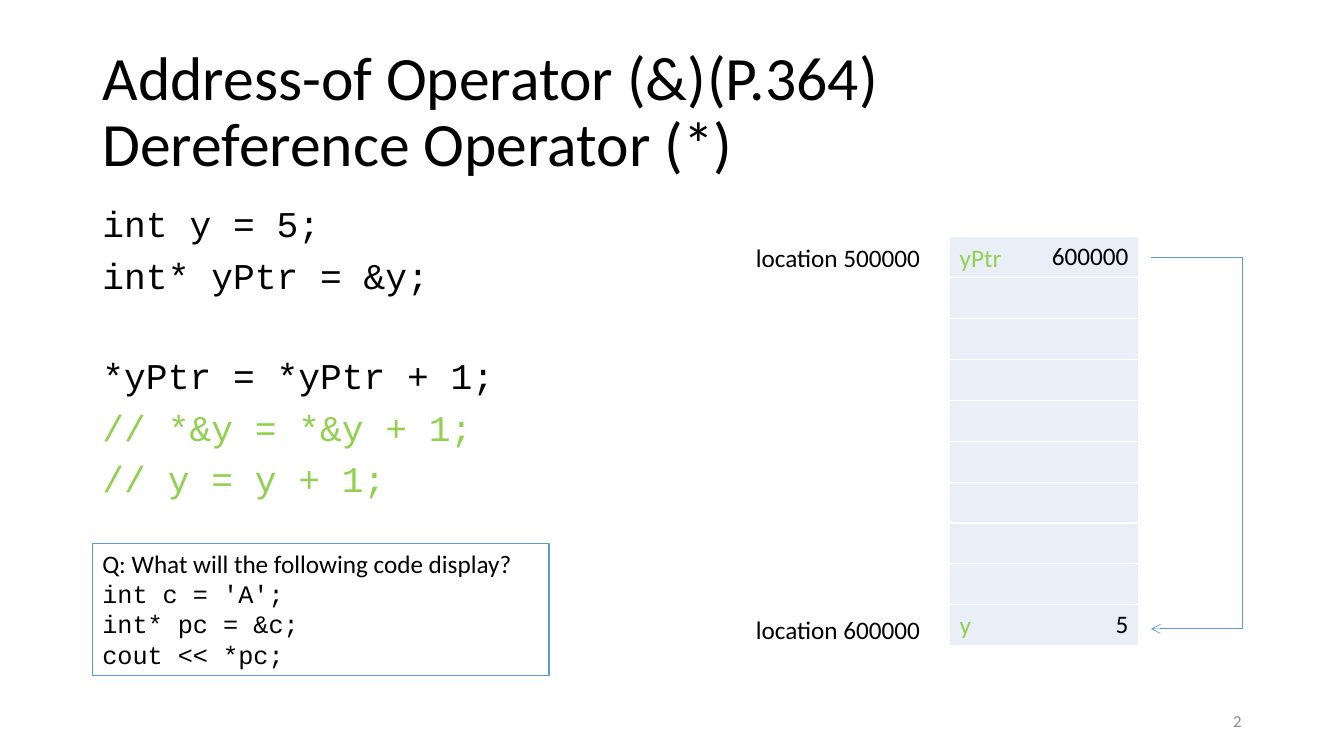
from lxml.etree import SubElement
from pptx import Presentation
from pptx.dml.color import RGBColor
from pptx.enum.shapes import MSO_CONNECTOR, MSO_SHAPE
from pptx.enum.text import MSO_ANCHOR, MSO_AUTO_SIZE, PP_ALIGN
from pptx.oxml.ns import qn
from pptx.util import Pt

BLACK = RGBColor(0x00, 0x00, 0x00)
GREEN = RGBColor(0x92, 0xD0, 0x50)
BLUE = RGBColor(0x5B, 0x9B, 0xD5)
PALE_BLUE = RGBColor(0xEA, 0xEF, 0xF7)
GRAY = RGBColor(0x8C, 0x8C, 0x8C)
TEXT_FONT = "Calibri"
CODE_FONT = "Courier New"

LEFT = 66
MEMORY_LEFT, MEMORY_TOP, MEMORY_WIDTH = 678.4, 169.2, 134.8
ROW_HEIGHT, ROW_COUNT = 29.2, 10
LAST_ROW_TOP = MEMORY_TOP + ROW_HEIGHT * (ROW_COUNT - 1)
ARROW_LEFT, ARROW_RIGHT = 822.2, 887.6


def write(paragraph, text, font=TEXT_FONT, size=18, color=BLACK,
          align=PP_ALIGN.LEFT, line_spacing=None, space_before=0):
    paragraph.text = text
    paragraph.alignment = align
    paragraph.line_spacing = line_spacing
    paragraph.space_before = Pt(space_before)
    for run in paragraph.runs:
        run.font.name = font
        run.font.size = Pt(size)
        run.font.color.rgb = color


def write_lines(text_frame, lines):
    """Fill a frame from (text, format) pairs, one paragraph each."""
    text_frame.word_wrap = True
    text_frame.auto_size = MSO_AUTO_SIZE.NONE
    for index, (text, style) in enumerate(lines):
        paragraph = text_frame.add_paragraph() if index else text_frame.paragraphs[0]
        write(paragraph, text, **style)


class SlideBuilder:
    def __init__(self, slide):
        self.slide = slide
        self.line_color = BLUE

    def placeholder(self, index, left, top, width, height, lines, anchor):
        shape = self.slide.placeholders[index]
        shape.left, shape.top = Pt(left), Pt(top)
        shape.width, shape.height = Pt(width), Pt(height)
        shape.text_frame.vertical_anchor = anchor
        write_lines(shape.text_frame, lines)
        for paragraph in shape.text_frame.paragraphs:
            properties = paragraph._p.get_or_add_pPr()
            properties.set("marL", "0")
            properties.set("indent", "0")
            SubElement(properties, qn("a:buNone"))
        return shape

    def text(self, left, top, width, height, text, **style):
        shape = self.slide.shapes.add_textbox(Pt(left), Pt(top), Pt(width), Pt(height))
        write_lines(shape.text_frame, [(text, style)])
        return shape

    def box(self, left, top, width, height, lines):
        shape = self.slide.shapes.add_shape(
            MSO_SHAPE.RECTANGLE, Pt(left), Pt(top), Pt(width), Pt(height))
        shape.shadow.inherit = False
        shape.fill.background()
        shape.line.color.rgb = self.line_color
        shape.line.width = Pt(0.75)
        shape.text_frame.vertical_anchor = MSO_ANCHOR.TOP
        write_lines(shape.text_frame, lines)

    def memory(self, left, top, width, row_height, values):
        """Draw a one-column table with a cell for each memory location."""
        table = self.slide.shapes.add_table(
            len(values), 1, Pt(left), Pt(top), Pt(width),
            Pt(row_height * len(values))).table
        table.first_row = False
        table.horz_banding = False
        for row, value in zip(table.rows, values):
            row.height = Pt(row_height)
            cell = row.cells[0]
            cell.fill.solid()
            cell.fill.fore_color.rgb = PALE_BLUE
            write(cell.text_frame.paragraphs[0], value, align=PP_ALIGN.RIGHT)

    def line(self, start, end, arrow=False):
        connector = self.slide.shapes.add_connector(
            MSO_CONNECTOR.STRAIGHT, *map(Pt, start), *map(Pt, end))
        connector.line.color.rgb = self.line_color
        connector.line.width = Pt(0.5)
        if arrow:
            SubElement(connector.line._get_or_add_ln(), qn("a:tailEnd"), type="arrow")
        SubElement(connector._element.spPr, qn("a:effectLst"))


def add_tab_stop(paragraph, position):
    tabs = SubElement(paragraph._p.get_or_add_pPr(), qn("a:tabLst"))
    SubElement(tabs, qn("a:tab"), pos=str(Pt(position)), algn="l")


def main():
    presentation = Presentation()
    presentation.slide_width, presentation.slide_height = Pt(960), Pt(540)
    builder = SlideBuilder(presentation.slides.add_slide(presentation.slide_layouts[1]))

    title = builder.placeholder(
        0, LEFT, 28.8, 828, 104.4,
        [("Address-of Operator (&)\t(P.364)\vDereference Operator (*)",
          {"size": 44, "line_spacing": 0.9})], MSO_ANCHOR.MIDDLE)
    add_tab_stop(title.text_frame.paragraphs[0], 489.6)

    code = {"font": CODE_FONT, "size": 25.9, "line_spacing": 0.9, "space_before": 8.7}
    comment = {**code, "color": GREEN}
    builder.placeholder(1, LEFT, 144, 334.8, 218.2, [
        ("int y = 5;", code),
        ("int* yPtr = &y;", code),
        ("*yPtr = *yPtr + 1;", {**code, "space_before": 43.8}),
        ("// *&y = *&y + 1;", comment),
        ("// y = y + 1;", comment),
    ], MSO_ANCHOR.TOP)

    number = builder.text(678, 500.4, 216, 28.8, "2", size=12, color=GRAY,
                          align=PP_ALIGN.RIGHT)
    number.text_frame.vertical_anchor = MSO_ANCHOR.MIDDLE

    builder.memory(MEMORY_LEFT, MEMORY_TOP, MEMORY_WIDTH, ROW_HEIGHT,
                   ["600000"] + [""] * (ROW_COUNT - 2) + ["5"])
    for location, location_top, name, name_top in [
        ("location 500000", MEMORY_TOP, "yPtr", MEMORY_TOP),
        ("location 600000", LAST_ROW_TOP + 3.6, "y", LAST_ROW_TOP),
    ]:
        builder.text(532.8, location_top, 132.5, 28.8, location)
        builder.text(MEMORY_LEFT, name_top, 66, 28.8, name, color=GREEN)

    pointer_y = MEMORY_TOP + ROW_HEIGHT / 2
    target_y = LAST_ROW_TOP + ROW_HEIGHT / 2 + 2.6
    builder.line((ARROW_LEFT, pointer_y), (ARROW_RIGHT, pointer_y))
    builder.line((ARROW_RIGHT, pointer_y), (ARROW_RIGHT, target_y))
    builder.line((ARROW_RIGHT, target_y), (ARROW_LEFT, target_y), arrow=True)

    question_code = {"font": CODE_FONT}
    builder.box(LEFT, 388, 326.2, 94.4, [
        ("Q: What will the following code display?", {}),
        ("int c = 'A';", question_code),
        ("int* pc = &c;", question_code),
        ("cout << *pc;", question_code),
    ])
    presentation.save("out.pptx")


if __name__ == "__main__":
    main()
